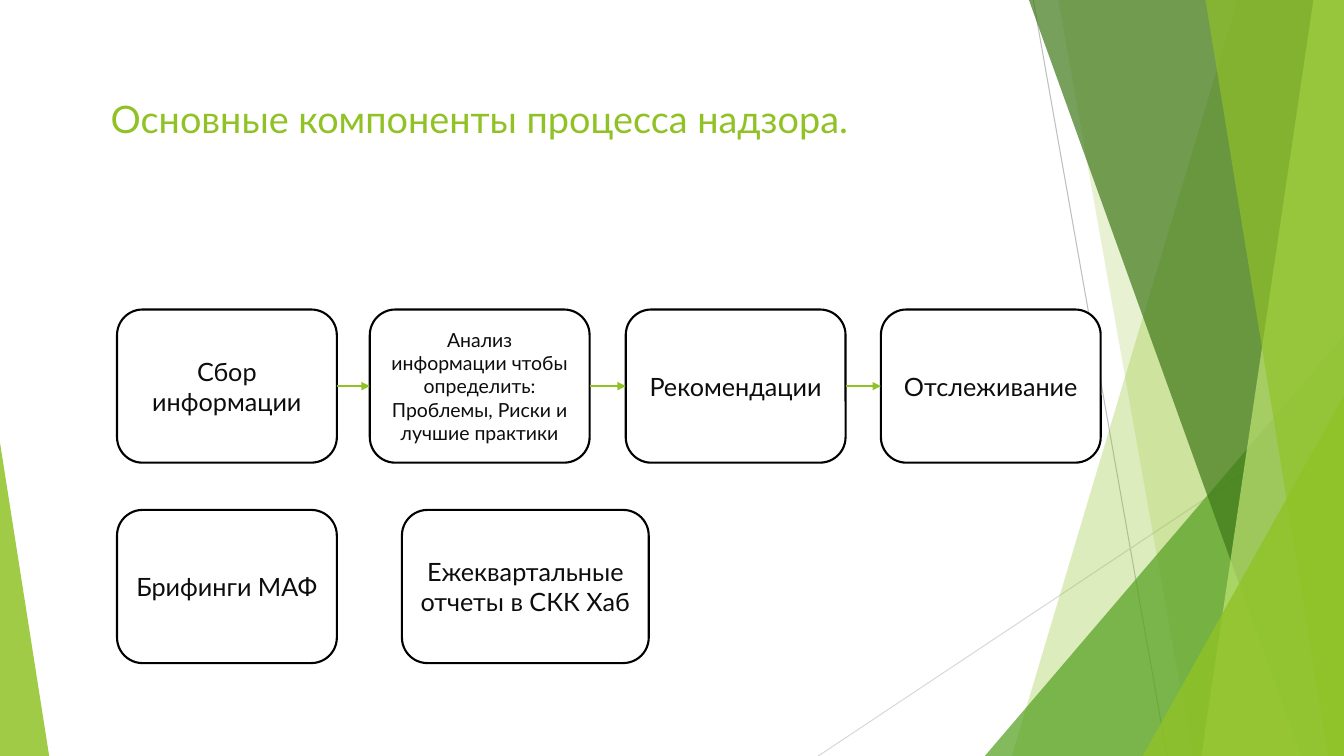
from lxml import etree
from pptx import Presentation
from pptx.dml.color import RGBColor
from pptx.enum.shapes import MSO_CONNECTOR, MSO_SHAPE
from pptx.enum.text import MSO_ANCHOR, PP_ALIGN
from pptx.oxml.ns import qn
from pptx.util import Cm, Pt

STRAIGHT = MSO_CONNECTOR.STRAIGHT
TRIANGLE = MSO_SHAPE.ISOSCELES_TRIANGLE
ROUNDED = MSO_SHAPE.ROUNDED_RECTANGLE
MIDDLE = MSO_ANCHOR.MIDDLE
CENTER = PP_ALIGN.CENTER

LIME = RGBColor(0x90, 0xC2, 0x26)
PALE_LIME = RGBColor(0xC0, 0xE4, 0x74)
GREEN = RGBColor(0x54, 0xA0, 0x21)
DARK_GREEN = RGBColor(0x3F, 0x78, 0x19)
GRAY = RGBColor(0xBF, 0xBF, 0xBF)
LIGHT_GRAY = RGBColor(0xD9, 0xD9, 0xD9)
WHITE = RGBColor(0xFF, 0xFF, 0xFF)
BLACK = RGBColor(0x00, 0x00, 0x00)
INK = RGBColor(0x0D, 0x0D, 0x0D)
FONT = "Lato"
WIDTH, HEIGHT = 33.87, 19.05

prs = Presentation()
prs.slide_width, prs.slide_height = Cm(WIDTH), Cm(HEIGHT)
slide = prs.slides.add_slide(prs.slide_layouts[6])
shapes = slide.shapes


def add_line(x1, y1, x2, y2, color, weight):
    line = shapes.add_connector(STRAIGHT, Cm(x1), Cm(y1), Cm(x2), Cm(y2))
    line.line.color.rgb = color
    line.line.width = Pt(weight)
    etree.SubElement(line._element.spPr, qn("a:effectLst"))
    return line


def paint_facet(facet, color, opacity):
    facet.shadow.inherit = False
    facet.fill.solid()
    facet.fill.fore_color.rgb = color
    facet.line.fill.background()
    color_node = facet._element.spPr.find(qn("a:solidFill"))[0]
    etree.SubElement(color_node, qn("a:alpha"), val=str(opacity * 1000))


# Thin lines behind the facets
add_line(26.04, 0, 29.41, HEIGHT, GRAY, 0.75)
add_line(WIDTH, 10.24, 20.62, HEIGHT, LIGHT_GRAY, 0.75)

# Facets, back to front: bands (top x, bottom x) reach the right edge,
# triangles are (left, top, width, apex position)
facets = [
    ((31.19, 25.5), LIME, 30),
    ((26.67, 30.05), LIME, 20),
    ((24.82, 8.46, 9.05, 1), GREEN, 72),
    ((25.93, 32.79), DARK_GREEN, 70),
    ((33.1, 30.28), PALE_LIME, 70),
    ((30.38, 33.48), LIME, 65),
    ((28.8, 9.98, 5.07, 1), LIME, 80),
    ((0, 11.15, 1.24, 0), LIME, 85),
]
for geometry, color, opacity in facets:
    if len(geometry) == 2:
        top_x, bottom_x = geometry
        outline = shapes.build_freeform(Cm(top_x), 0)
        outline.add_line_segments(
            [(Cm(WIDTH), 0), (Cm(WIDTH), Cm(HEIGHT)), (Cm(bottom_x), Cm(HEIGHT))])
        facet = outline.convert_to_shape()
    else:
        left, top, width, apex = geometry
        facet = shapes.add_shape(
            TRIANGLE, Cm(left), Cm(top), Cm(width), Cm(HEIGHT - top))
        facet.adjustments[0] = apex
    paint_facet(facet, color, opacity)

# Title
title = shapes.add_textbox(Cm(2.54), Cm(2.29), Cm(26.47), Cm(2.41))
title.text_frame.word_wrap = True
title.text_frame.text = "Основные компоненты процесса надзора."
title_font = title.text_frame.paragraphs[0].runs[0].font
title_font.name, title_font.size = FONT, Pt(27)
title_font.color.rgb = LIME

# Boxes: left, top, width, text size, side inset, text
STEP_TOP, REPORT_TOP = 7.8, 12.85
boxes = [
    (2.95, STEP_TOP, 5.54, 18, 0.25, "Сбор информации"),
    (9.32, STEP_TOP, 5.54, 13.9, 0.32,
     "Анализ информации чтобы определить: Проблемы, Риски и лучшие практики"),
    (15.77, STEP_TOP, 5.54, 18, 0.25, "Рекомендации"),
    (22.2, STEP_TOP, 5.54, 18, 0.25, "Отслеживание"),
    (2.95, REPORT_TOP, 5.54, 18, 0.25, "Брифинги МАФ"),
    (10.13, REPORT_TOP, 6.22, 18, 0.25, "Ежеквартальные отчеты в СКК Хаб"),
]
steps = []
for left, top, width, size, inset, text in boxes:
    box = shapes.add_shape(ROUNDED, Cm(left), Cm(top), Cm(width), Cm(3.86))
    box.shadow.inherit = False
    box.fill.solid()
    box.fill.fore_color.rgb = WHITE
    box.line.color.rgb = BLACK
    box.line.width = Pt(1.5)
    frame = box.text_frame
    frame.word_wrap = True
    frame.vertical_anchor = MIDDLE
    frame.margin_left = frame.margin_right = Cm(inset)
    frame.text = text
    paragraph = frame.paragraphs[0]
    paragraph.alignment = CENTER
    font = paragraph.runs[0].font
    font.name, font.size = FONT, Pt(size)
    font.color.rgb = INK
    if top == STEP_TOP:
        steps.append(box)

# Arrows from each step's right side to the next step's left side
for step, next_step in zip(steps, steps[1:]):
    arrow = add_line(0, 0, 1, 0, LIME, 1)
    arrow.begin_connect(step, 3)
    arrow.end_connect(next_step, 1)
    etree.SubElement(arrow.line._get_or_add_ln(), qn("a:tailEnd"), type="triangle")

prs.save("out.pptx")
